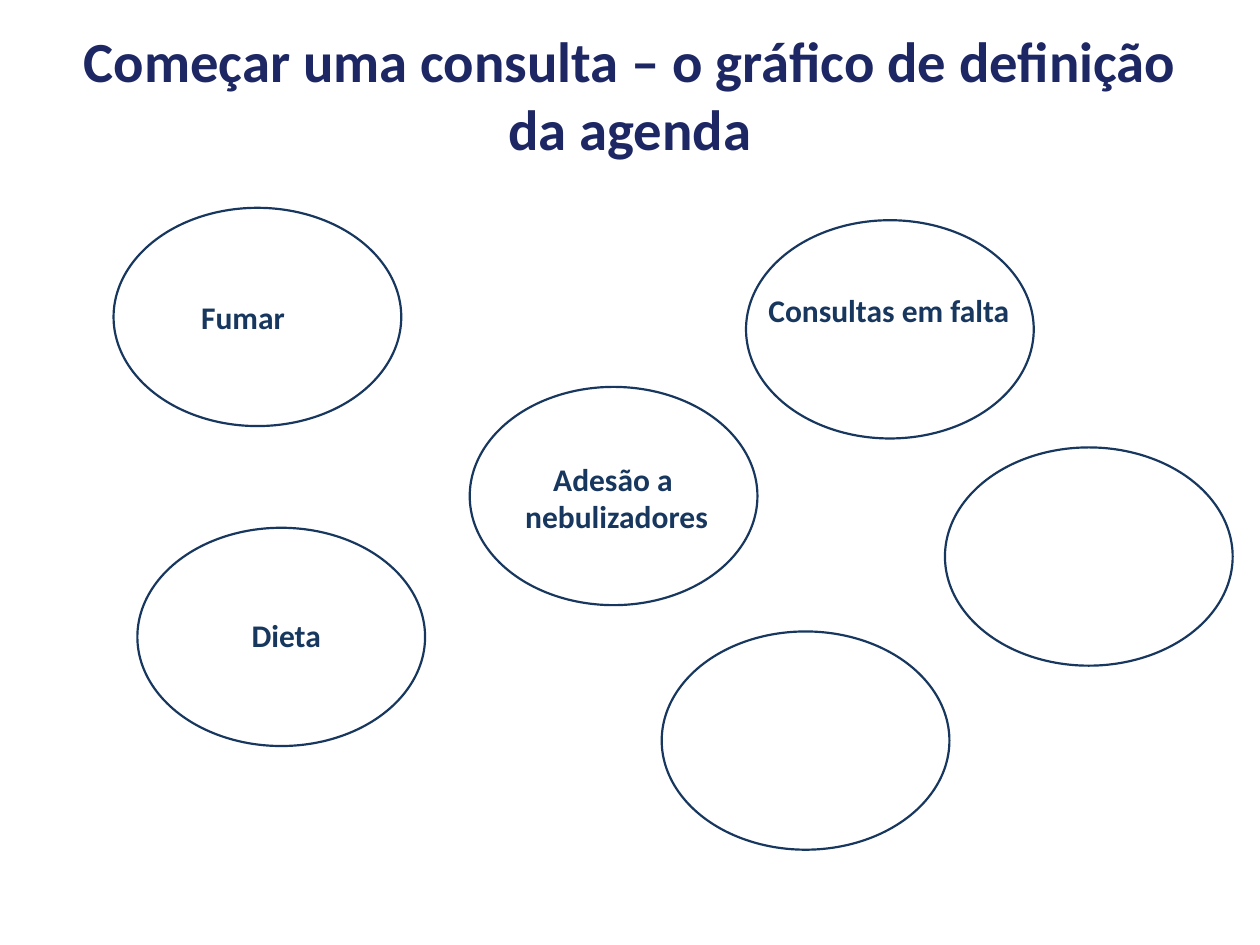
from pptx import Presentation
from pptx.dml.color import RGBColor
from pptx.enum import shapes, text
from pptx.util import Cm, Pt

TITLE = "Começar uma consulta – o gráfico de definição da agenda"
NAVY, BLUE = "1D2763", "17375E"
FONT = "Calibri"

# Left and top of each bubble, in cm
BUBBLES = [(2.29, 4.19), (15.04, 4.44), (2.77, 10.64),
           (19.05, 9.02), (9.47, 7.8), (13.34, 12.73)]
SIZE = 5.8, 4.4

# Lines, then left, top, width and height in cm
TOPICS = [
    (["Dieta"], (4.77, 12.29, 2, 1.02)),
    (["Fumar"], (3.7, 5.89, 2.4, 1.02)),
    (["Adesão a ", "nebulizadores"], (10.28, 9.14, 4.3, 1.78)),
    (["Consultas em falta"], (15.17, 5.74, 5.5, 1.02)),
]


def color(code):
    return RGBColor.from_string(code)


def write(frame, lines, size, code):
    for i, line in enumerate(lines):
        para = frame.add_paragraph() if i else frame.paragraphs[0]
        para.alignment = text.PP_ALIGN.CENTER
        run = para.add_run()
        run.text = line
        font = run.font
        font.name, font.size, font.bold = FONT, Pt(size), True
        font.color.rgb = color(code)


def add_title(slide):
    title = slide.shapes.title
    title.left, title.top = Cm(1.27), Cm(0.81)
    title.width, title.height = Cm(22.86), Cm(2.16)
    frame = title.text_frame
    frame.word_wrap = True
    frame.auto_size = text.MSO_AUTO_SIZE.NONE
    frame.vertical_anchor = text.MSO_ANCHOR.MIDDLE
    write(frame, [TITLE], 32.4, NAVY)


def add_bubble(slide, spot):
    oval = slide.shapes.add_shape(
        shapes.MSO_SHAPE.OVAL, *map(Cm, spot + SIZE))
    oval.shadow.inherit = False
    oval.fill.background()
    oval.line.color.rgb = color(BLUE)
    oval.line.width = Pt(1.25)


def add_topic(slide, lines, box):
    frame = slide.shapes.add_textbox(*map(Cm, box)).text_frame
    frame.word_wrap = False
    frame.auto_size = text.MSO_AUTO_SIZE.SHAPE_TO_FIT_TEXT
    write(frame, lines, 18, BLUE)


def main():
    deck = Presentation()
    deck.slide_width, deck.slide_height = Cm(25.4), Cm(19.05)
    slide = deck.slides.add_slide(deck.slide_layouts[5])
    add_title(slide)
    for spot in BUBBLES:
        add_bubble(slide, spot)
    for lines, box in TOPICS:
        add_topic(slide, lines, box)
    deck.save("out.pptx")


if __name__ == "__main__":
    main()
